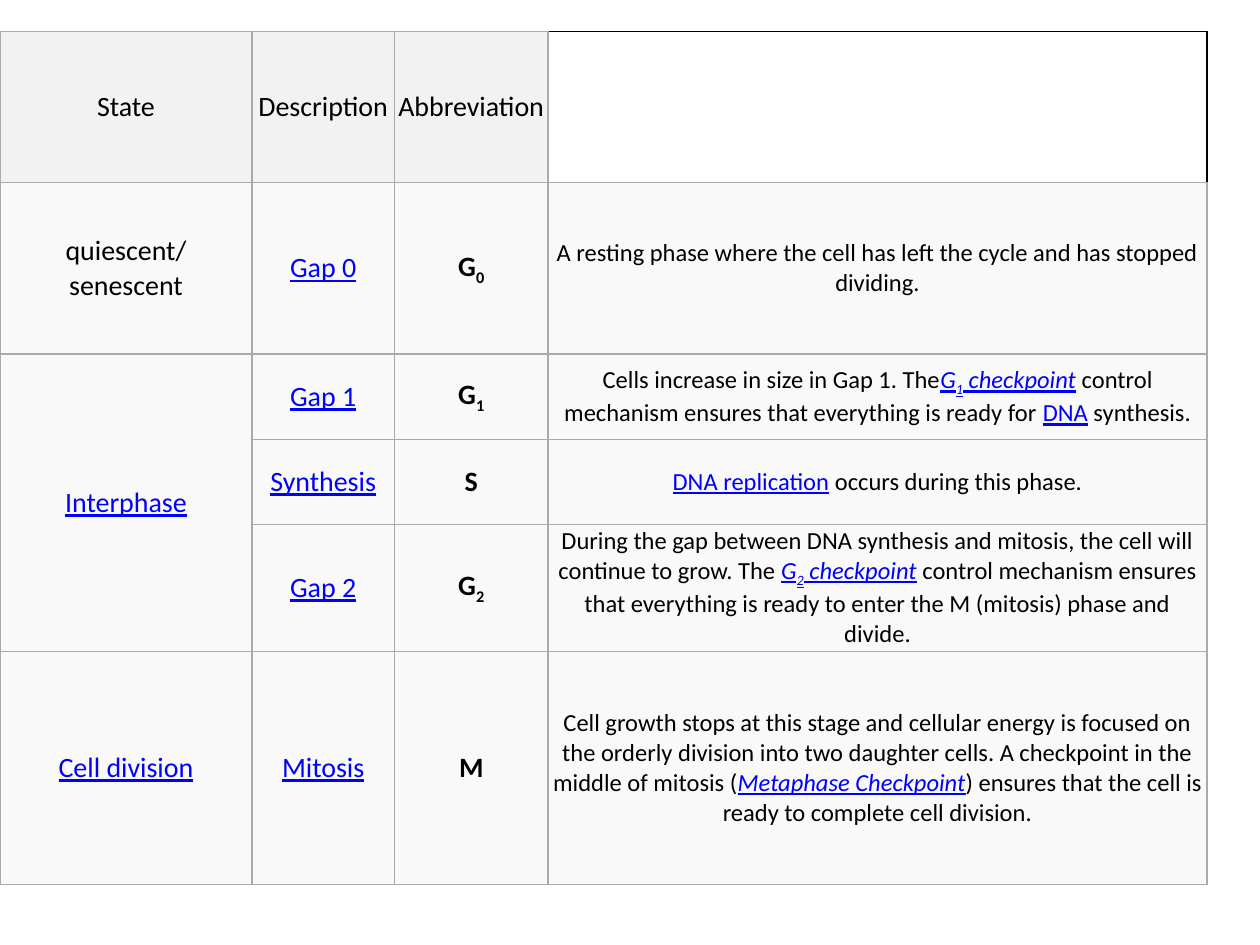
from pptx import Presentation
from pptx.dml.color import RGBColor
from pptx.enum.text import MSO_ANCHOR, PP_ALIGN
from pptx.oxml.ns import qn
from pptx.util import Inches, Pt
from lxml import etree

MIDDLE, CENTER = MSO_ANCHOR.MIDDLE, PP_ALIGN.CENTER

THEME = {
    "font": "Calibri", "label_size": 16, "note_size": 14,
    "text": "000000", "link": "0000FF",
    "header": "F2F2F2", "body": "F9F9F9",
    "grid": "AAAAAA", "edge": "000000", "line": 0.75,
}
# Run styles: font attributes, plus "color" and "baseline"
STYLES = {
    "plain": {},
    "bold": {"bold": True},
    "bold_sub": {"bold": True, "baseline": -25000},
    "link": {"underline": True, "color": "link"},
    "term": {"underline": True, "italic": True, "color": "link"},
    "term_sub": {"underline": True, "italic": True, "color": "link",
                 "baseline": -25000},
}


def plain(text):
    return [(text, "plain")]


def link(text):
    return [(text, "link")]


def phase(letter, index=""):
    return [(letter, "bold")] + ([(index, "bold_sub")] if index else [])


def checkpoint(index):
    return [("G", "term"), (index, "term_sub"), (" checkpoint", "term")]


COLS = [2, 1.13, 1.22, 5.23]
ROWS = [1.2, 1.36, 0.68, 0.67, 1.01, 1.85]
LEFT, TOP = 0, 0.25
INTERPHASE = (2, 4)  # first and last row of the merged state cell

CELLS = [
    [plain("State"), plain("Description"), plain("Abbreviation"), []],
    [plain("quiescent/\nsenescent"), link("Gap 0"), phase("G", "0"),
     plain("A resting phase where the cell has left the cycle and has "
           "stopped dividing.")],
    [link("Interphase"), link("Gap 1"), phase("G", "1"),
     plain("Cells increase in size in Gap 1. The") + checkpoint("1")
     + plain(" control mechanism ensures that everything is ready for ")
     + link("DNA") + plain(" synthesis.")],
    [[], link("Synthesis"), phase("S"),
     link("DNA replication") + plain(" occurs during this phase.")],
    [[], link("Gap 2"), phase("G", "2"),
     plain("During the gap between DNA synthesis and mitosis, the cell will "
           "continue to grow. The ") + checkpoint("2")
     + plain(" control mechanism ensures that everything is ready to enter "
             "the M (mitosis) phase and divide.")],
    [link("Cell division"), link("Mitosis"), phase("M"),
     plain("Cell growth stops at this stage and cellular energy is focused on "
           "the orderly division into two daughter cells. A checkpoint in the "
           "middle of mitosis (") + [("Metaphase Checkpoint", "term")]
     + plain(") ensures that the cell is ready to complete cell division.")],
]


def set_borders(cell, colors):
    tcPr = cell._tc.get_or_add_tcPr()
    for side, color in colors.items():
        ln = etree.SubElement(tcPr, qn(f"a:ln{side}"), w=str(Pt(THEME["line"])))
        fill = etree.SubElement(ln, qn("a:solidFill"))
        etree.SubElement(fill, qn("a:srgbClr"), val=THEME[color])


def add_text(p, text, style, size):
    for i, line in enumerate(text.split("\n")):
        if i:
            p.add_line_break()
        r = p.add_run()
        r.text = line
        values = {"name": THEME["font"], "size": Pt(size), "bold": False,
                  **STYLES[style]}
        color = values.pop("color", "text")
        baseline = values.pop("baseline", None)
        for name, value in values.items():
            setattr(r.font, name, value)
        r.font.color.rgb = RGBColor.from_string(THEME[color])
        if baseline:
            r.font._element.set("baseline", str(baseline))


def format_cell(cell, runs, row, col):
    corner = row == 0 and col == len(COLS) - 1
    outer = "edge" if corner else "grid"
    set_borders(cell, {"L": "grid", "R": outer, "T": outer, "B": "grid"})
    if corner:
        cell.fill.background()
    else:
        cell.fill.solid()
        fill = THEME["body" if row else "header"]
        cell.fill.fore_color.rgb = RGBColor.from_string(fill)
    layout = {"vertical_anchor": MIDDLE,
              "margin_left": Inches(0.02), "margin_right": Inches(0.02),
              "margin_top": Inches(0.01), "margin_bottom": Inches(0.01)}
    for name, value in layout.items():
        setattr(cell, name, value)
    p = cell.text_frame.paragraphs[0]
    p.alignment = CENTER
    size = THEME["note_size" if col == len(COLS) - 1 else "label_size"]
    for text, style in runs:
        add_text(p, text, style, size)


def main():
    prs = Presentation()
    prs.slide_width, prs.slide_height = Inches(10), Inches(7.5)
    s = prs.slides.add_slide(prs.slide_layouts[6])
    table = s.shapes.add_table(
        len(ROWS), len(COLS), Inches(LEFT), Inches(TOP),
        Inches(sum(COLS)), Inches(sum(ROWS))).table
    table.first_row = table.horz_banding = False
    for column, width in zip(table.columns, COLS):
        column.width = Inches(width)
    for row, height in zip(table.rows, ROWS):
        row.height = Inches(height)
    first, last = INTERPHASE
    table.cell(first, 0).merge(table.cell(last, 0))
    for i, row in enumerate(CELLS):
        for j, runs in enumerate(row):
            format_cell(table.cell(i, j), runs, i, j)
    prs.save("out.pptx")


if __name__ == "__main__":
    main()
